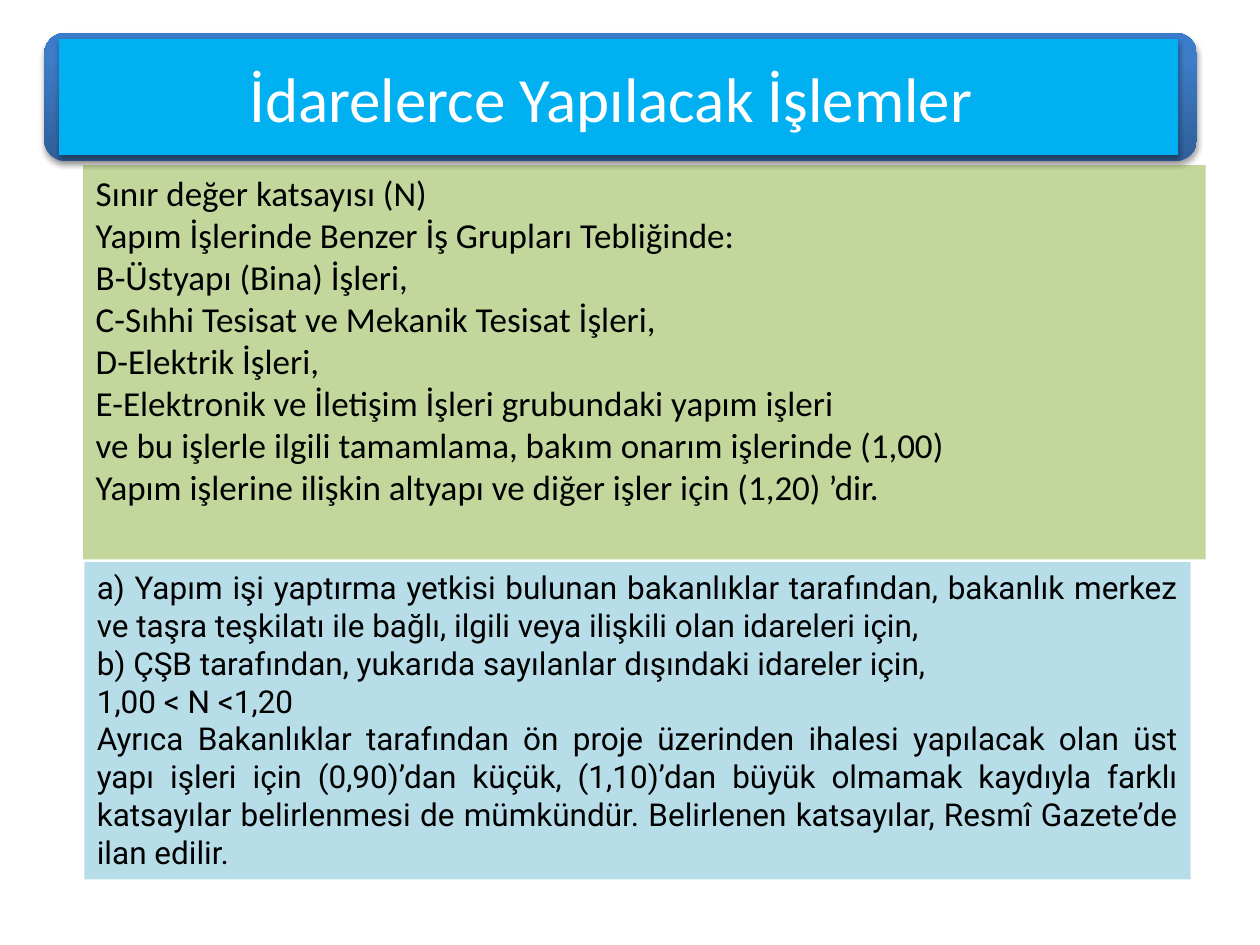
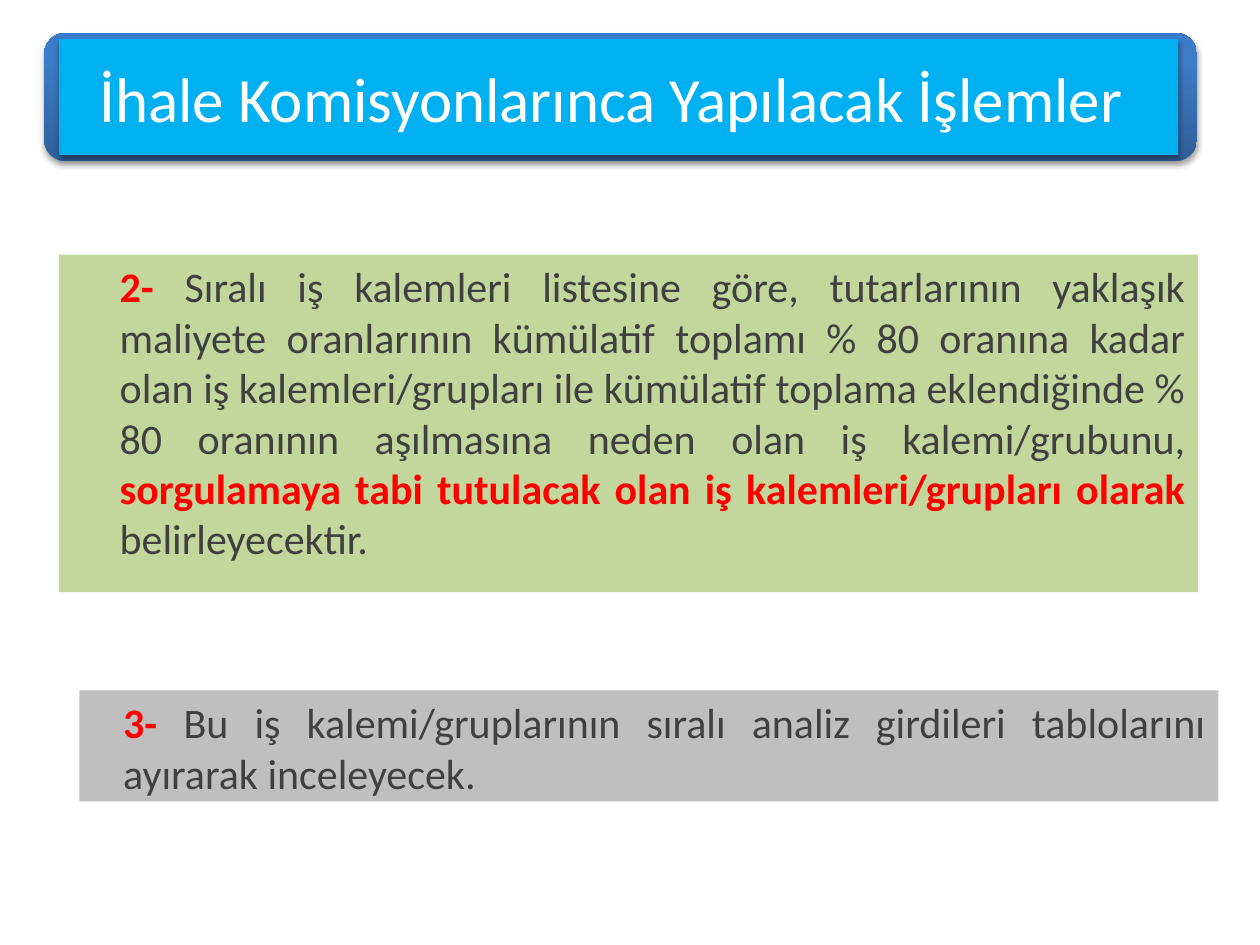
from lxml import etree
from pptx import Presentation
from pptx.dml.color import RGBColor
from pptx.enum.shapes import MSO_SHAPE
from pptx.enum.text import MSO_ANCHOR, MSO_AUTO_SIZE, PP_ALIGN
from pptx.oxml import parse_xml
from pptx.oxml.ns import nsdecls, qn
from pptx.util import Inches, Pt

ROUNDED = MSO_SHAPE.ROUNDED_RECTANGLE
MIDDLE, TOP = MSO_ANCHOR.MIDDLE, MSO_ANCHOR.TOP
NO_FIT = MSO_AUTO_SIZE.NONE
LEFT, CENTER, JUSTIFY = PP_ALIGN.LEFT, PP_ALIGN.CENTER, PP_ALIGN.JUSTIFY

BLACK = RGBColor(0x00, 0x00, 0x00)
WHITE = RGBColor(0xFF, 0xFF, 0xFF)
RED = RGBColor(0xFF, 0x00, 0x00)
DARK_GREY = RGBColor(0x40, 0x40, 0x40)
GREY = RGBColor(0xBF, 0xBF, 0xBF)
GREEN = RGBColor(0xC3, 0xD6, 0x9B)
PALE_BLUE = RGBColor(0xB7, 0xDE, 0xE8)
SKY_BLUE = RGBColor(0x00, 0xB0, 0xF0)

BAND_GRADIENT = f"""<a:gradFill {nsdecls('a')} rotWithShape="1"><a:gsLst>
<a:gs pos="0"><a:srgbClr val="2F5F99"/></a:gs>
<a:gs pos="80000"><a:srgbClr val="3D7CC7"/></a:gs>
<a:gs pos="100000"><a:srgbClr val="3A7CCB"/></a:gs>
</a:gsLst><a:lin ang="16200000" scaled="0"/></a:gradFill>"""
SOFT_SHADOW = f"""<a:effectLst {nsdecls('a')}>
<a:outerShdw blurRad="{Pt(3.1)}" dist="{Pt(1.8)}" dir="5400000" rotWithShape="0">
<a:srgbClr val="000000"><a:alpha val="35000"/></a:srgbClr></a:outerShdw></a:effectLst>"""


def write_panel(panel, place, fill, paragraphs, size, font="Calibri",
                align=JUSTIFY, anchor=TOP, indent=0, before=0):
    panel.left, panel.top, panel.width, panel.height = map(Inches, place)
    panel.fill.solid()
    panel.fill.fore_color.rgb = fill
    frame = panel.text_frame
    frame.word_wrap = True
    frame.auto_size = NO_FIT
    frame.vertical_anchor = anchor
    for number, spans in enumerate(paragraphs):
        para = frame.add_paragraph() if number else frame.paragraphs[0]
        para.alignment = align
        para.space_before = Pt(before)
        properties = para._p.get_or_add_pPr()
        properties.set("marL", str(Inches(indent)))
        properties.set("indent", "0")
        etree.SubElement(properties, qn("a:buNone"))
        for text, color, bold in spans:
            span = para.add_run()
            span.text = text
            span.font.name = font
            span.font.size = Pt(size)
            span.font.bold = bold
            span.font.color.rgb = color


def add_title_band(page, text):
    band = page.shapes.add_shape(ROUNDED, Inches(0.35), Inches(0.26), Inches(9.15), Inches(1.02))
    band.line.fill.background()
    band_properties = band._element.spPr
    band_properties.insert(2, parse_xml(BAND_GRADIENT))
    band_properties.append(parse_xml(SOFT_SHADOW))
    title = page.shapes.title
    write_panel(title, (0.47, 0.31, 8.88, 0.92), SKY_BLUE, [[(text, WHITE, False)]],
                36, align=CENTER, anchor=MIDDLE)
    title.text_frame.margin_right = Inches(0.22)
    title._element.spPr.append(parse_xml(SOFT_SHADOW))
    band._element.addnext(title._element)


deck = Presentation()
deck.slide_width, deck.slide_height = Inches(10), Inches(7.5)
title_and_body = deck.slide_layouts[1]

page = deck.slides.add_slide(title_and_body)
coefficient_lines = [
    "Sınır değer katsayısı (N)",
    "Yapım İşlerinde Benzer İş Grupları Tebliğinde:",
    "B-Üstyapı (Bina) İşleri,",
    "C-Sıhhi Tesisat ve Mekanik Tesisat İşleri,",
    "D-Elektrik İşleri,",
    "E-Elektronik ve İletişim İşleri grubundaki yapım işleri",
    "ve bu işlerle ilgili tamamlama, bakım onarım işlerinde (1,00)",
    "Yapım işlerine ilişkin altyapı ve diğer işler için (1,20) ’dir.",
]
write_panel(page.placeholders[1], (0.66, 1.31, 8.91, 3.13), GREEN,
            [[(line, BLACK, False)] for line in coefficient_lines], 20, align=LEFT)

authority_lines = [
    "a) Yapım işi yaptırma yetkisi bulunan bakanlıklar tarafından, bakanlık merkez "
    "ve taşra teşkilatı ile bağlı, ilgili veya ilişkili olan idareleri için,",
    "b) ÇŞB tarafından, yukarıda sayılanlar dışındaki idareler için,",
    "1,00 < N <1,20",
    "Ayrıca Bakanlıklar tarafından ön proje üzerinden ihalesi yapılacak olan üst yapı "
    "işleri için (0,90)’dan küçük, (1,10)’dan büyük olmamak kaydıyla farklı katsayılar "
    "belirlenmesi de mümkündür. Belirlenen katsayılar, Resmî Gazete’de ilan edilir.",
]
authority_box = page.shapes.add_textbox(0, 0, 0, 0)
write_panel(authority_box, (0.67, 4.46, 8.78, 2.52), PALE_BLUE,
            [[(line, BLACK, False)] for line in authority_lines], 18, font="Roboto")
add_title_band(page, "İdarelerce Yapılacak İşlemler")

page = deck.slides.add_slide(title_and_body)
selection_spans = [
    ("2- ", RED, True),
    ("Sıralı iş kalemleri listesine göre, tutarlarının yaklaşık maliyete oranlarının "
     "kümülatif toplamı % 80 oranına kadar olan iş kalemleri/grupları ile kümülatif "
     "toplama eklendiğinde % 80 oranının aşılmasına neden olan iş kalemi/grubunu, ",
     DARK_GREY, False),
    ("sorgulamaya tabi tutulacak olan iş kalemleri/grupları olarak ", RED, True),
    ("belirleyecektir.", DARK_GREY, False),
]
write_panel(page.placeholders[1], (0.47, 2.02, 9.04, 2.68), GREEN,
            [selection_spans], 24, indent=0.38, before=4.8)
add_title_band(page, "İhale Komisyonlarınca Yapılacak İşlemler")

review_spans = [
    ("3- ", RED, True),
    ("Bu iş kalemi/gruplarının sıralı analiz girdileri tablolarını ayırarak inceleyecek.",
     DARK_GREY, False),
]
review_box = page.shapes.add_textbox(0, 0, 0, 0)
write_panel(review_box, (0.63, 5.48, 9.04, 0.88), GREY,
            [review_spans], 24, indent=0.25, before=4.8)

deck.save("out.pptx")
